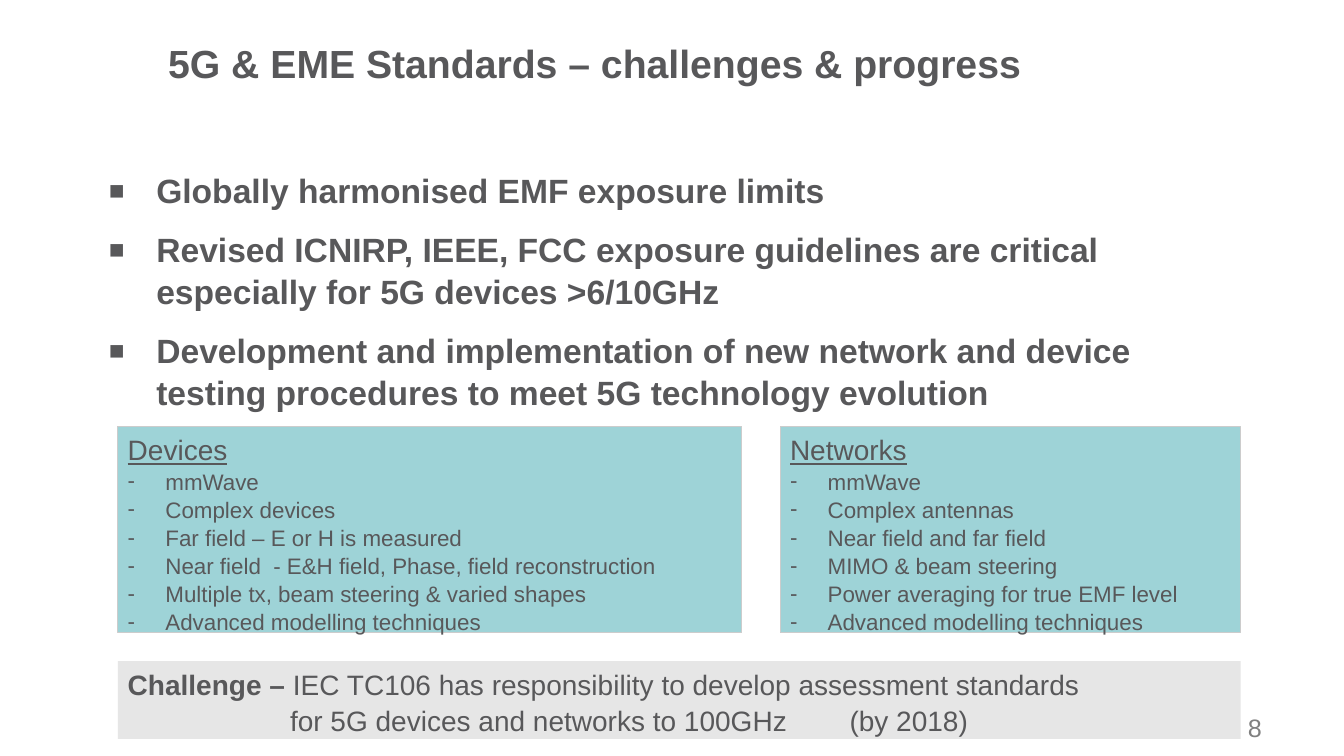
from lxml import etree
from pptx import Presentation
from pptx import util as u
from pptx.dml import color
from pptx.enum import shapes, text
from pptx.oxml import ns

THEME = {
    "font": "Arial",
    "ink": "58585A",
    "muted": "808080",
    "panel": "9ED3D7",
    "panel_line": "CCCCCC",
    "band": "E6E6E6",
    "title": 28,
    "body": 24,
    "heading": 20,
    "number": 18,
    "item": 16,
    "spacing": 1.05,
}

deck = Presentation()
deck.slide_width, deck.slide_height = u.Cm(33.87), u.Cm(19.05)
page = deck.slides.add_slide(deck.slide_layouts[6])


def add_box(spot, fill=None, line=None, **frame_format):
    box = page.shapes.add_shape(shapes.MSO_SHAPE.RECTANGLE, *map(u.Cm, spot))
    box.shadow.inherit = False
    for part, shade in ((box.fill, fill), (box.line.fill, line)):
        if shade:
            part.solid()
            part.fore_color.rgb = color.RGBColor.from_string(THEME[shade])
        else:
            part.background()
    if line:
        box.line.width = u.Pt(0.75)
    frame = box.text_frame
    settings = {"word_wrap": True, "vertical_anchor": text.MSO_ANCHOR.TOP}
    for name, value in (settings | frame_format).items():
        setattr(frame, name, value)
    return frame


def add_para(frame, spans, size, ink="ink", bullet=(), indent=0, **para_format):
    para = frame.paragraphs[0]
    if para.runs:
        para = frame.add_paragraph()
    props = para._p.get_or_add_pPr()
    if indent:
        props.set("marL", str(u.Cm(indent)))
        props.set("indent", str(-u.Cm(indent)))
    for tag, values in bullet:
        element = etree.SubElement(props, ns.qn(tag))
        for name, value in values.items():
            element.set(name, value)
    settings = {"alignment": text.PP_ALIGN.LEFT, "line_spacing": THEME["spacing"]}
    for name, value in (settings | para_format).items():
        setattr(para, name, value)
    for words, font_format in spans:
        span = para.add_run()
        span.text = words
        span.font.color.rgb = color.RGBColor.from_string(THEME[ink])
        base = {"name": THEME["font"], "size": u.Pt(THEME[size])}
        for name, value in (base | font_format).items():
            setattr(span.font, name, value)
    return para


title = add_box((3.99, 0.36, 22.86, 2.39), vertical_anchor=text.MSO_ANCHOR.MIDDLE)
add_para(title, [("5G & EME Standards – challenges & progress", {"bold": True})], "title")

body = add_box((2.72, 4.22, 27.36, 8.03), margin_left=0, margin_top=0,
               margin_right=0, margin_bottom=0)
square = [("a:buSzPct", {"val": "150000"}),
          ("a:buFont", {"typeface": THEME["font"]}),
          ("a:buChar", {"char": "▪"})]
messages = [
    "Globally harmonised EMF exposure limits",
    "Revised ICNIRP, IEEE, FCC exposure guidelines are critical especially for 5G devices >6/10GHz",
    "Development and implementation of new network and device testing procedures to meet 5G technology evolution",
]
for index, message in enumerate(messages):
    add_para(body, [(message, {"bold": True})], "body", bullet=square, indent=1.22,
             space_before=u.Pt(12 if index else 0))

challenge = add_box((2.97, 16.66, 28.3, 1.96), fill="band")
stops = etree.Element(ns.qn("a:tabLst"))
for stop in (4.09, 18.19):
    etree.SubElement(stops, ns.qn("a:tab"), pos=str(u.Cm(stop)), algn="l")
para = add_para(challenge, [
    ("Challenge – ", {"bold": True}),
    ("IEC TC106 has responsibility to develop assessment standards", {}),
    ("\tfor 5G devices and networks to 100GHz\t(by 2018)", {}),
], "heading")
para._p.get_or_add_pPr().append(stops)
para.add_line_break()
line_break = para._p.findall(ns.qn("a:br"))[0]
para.runs[2]._r.addprevious(line_break)

dash = [("a:buFont", {"typeface": THEME["font"]}), ("a:buChar", {"char": "-"})]
panels = [
    ("Devices", 2.97, 15.72, [
        "mmWave",
        "Complex devices",
        "Far field – E or H is measured",
        "Near field  - E&H field, Phase, field reconstruction",
        "Multiple tx, beam steering & varied shapes",
        "Advanced modelling techniques",
    ]),
    ("Networks", 19.66, 11.6, [
        "mmWave",
        "Complex antennas",
        "Near field and far field",
        "MIMO & beam steering",
        "Power averaging for true EMF level",
        "Advanced modelling techniques",
    ]),
]
for heading, left, width, items in panels:
    panel = add_box((left, 10.74, width, 5.21), fill="panel", line="panel_line")
    add_para(panel, [(heading, {"underline": True})], "heading")
    for item in items:
        add_para(panel, [(item, {})], "item", bullet=dash, indent=0.95)

number = add_box((30.28, 17.78, 2.69, 1.02))
add_para(number, [("8", {})], "number", ink="muted", alignment=text.PP_ALIGN.CENTER)

deck.save("out.pptx")
